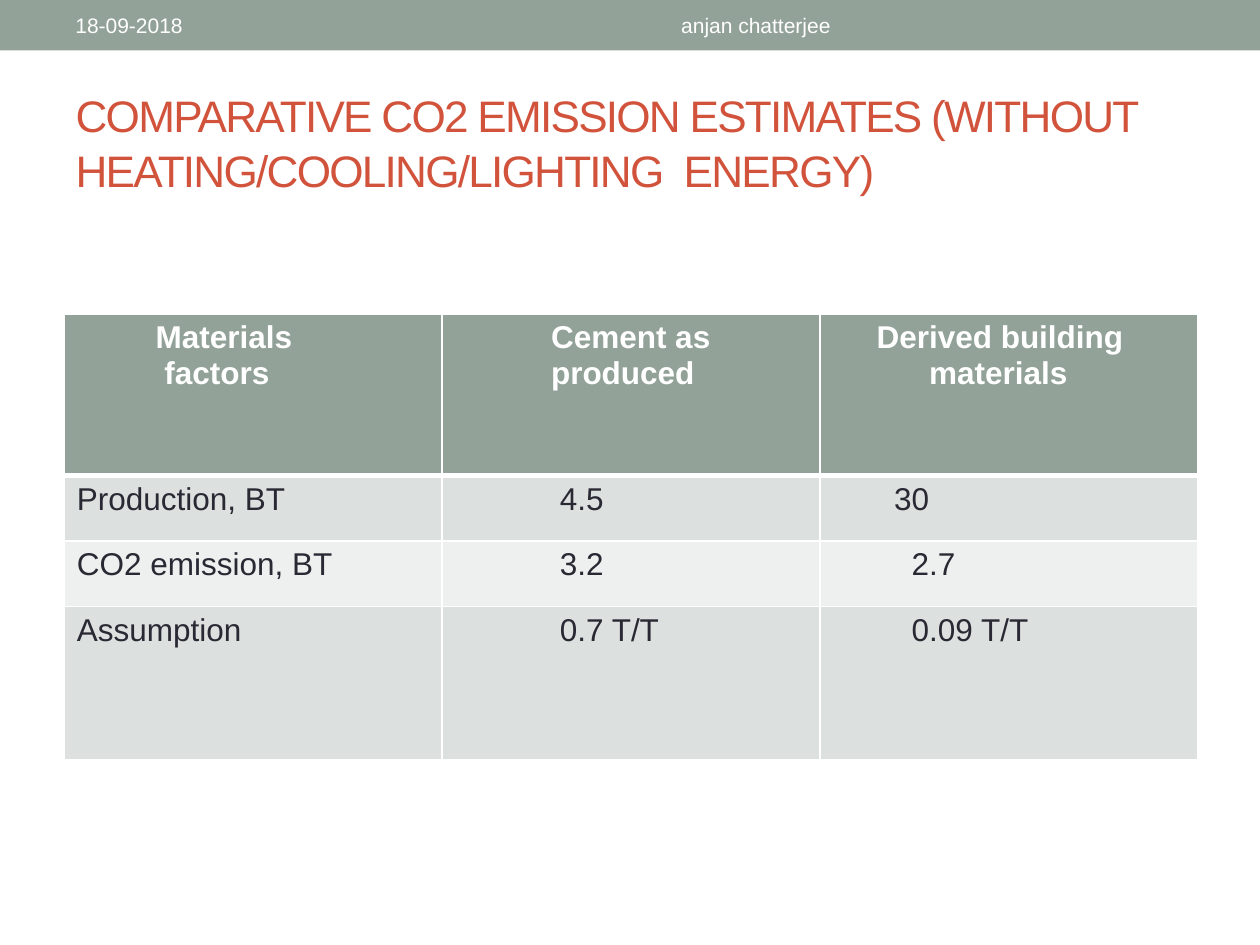
from pptx import Presentation
from pptx.dml.color import RGBColor
from pptx.enum.shapes import MSO_SHAPE
from pptx.enum.text import MSO_ANCHOR, PP_ALIGN
from pptx.oxml import parse_xml
from pptx.oxml.ns import nsdecls
from pptx.util import Pt


def rgb(value):
    return RGBColor.from_string(value)


def style(p, size, color, bold=False):
    for r in p.runs:
        r.font.name = "Arial"
        r.font.size = Pt(size)
        r.font.bold = bold
        r.font.color.rgb = rgb(color)


SAGE, WHITE, INK, RUST = "93A299", "FFFFFF", "292934", "D2533C"

prs = Presentation()
prs.slide_width, prs.slide_height = Pt(720), Pt(540)
s = prs.slides.add_slide(prs.slide_layouts[5])

sp = s.shapes.add_shape(MSO_SHAPE.RECTANGLE, 0, 0, Pt(720), Pt(28.8))
sp.shadow.inherit = False
sp.fill.solid()
sp.fill.fore_color.rgb = rgb(SAGE)
sp.line.fill.background()

title = s.shapes.title
title.left, title.top, title.width, title.height = Pt(36), Pt(41.76), Pt(648), Pt(77.76)
tf = title.text_frame
tf.text = "COMPARATIVE CO2 EMISSION ESTIMATES (WITHOUT HEATING/COOLING/LIGHTING  ENERGY)"
tf.vertical_anchor = MSO_ANCHOR.MIDDLE
tf.word_wrap = True
p = tf.paragraphs[0]
p.alignment = PP_ALIGN.LEFT
p.line_spacing = 1.05
style(p, 25.2, RUST)
p.runs[0].font._element.set("spc", "-100")

for text, left, width, align in [
    ("18-09-2018", 36, 228, PP_ALIGN.LEFT),
    ("anjan chatterjee", 270, 324, PP_ALIGN.CENTER),
]:
    tf = s.shapes.add_textbox(Pt(left), Pt(1.44), Pt(width), Pt(25.92)).text_frame
    tf.text = text
    tf.word_wrap = True
    tf.vertical_anchor = MSO_ANCHOR.MIDDLE
    tf.paragraphs[0].alignment = align
    style(tf.paragraphs[0], 12, WHITE)

rows = [
    [[("Materials", 45), ("factors", 50)],
     [("Cement as", 55), ("produced", 55)],
     [("Derived building", 25), ("materials", 55)]],
    [[("Production, BT", 0)], [("4.5", 60)], [("30", 35)]],
    [[("CO2 emission, BT", 0)], [("3.2", 60)], [("2.7", 45)]],
    [[("Assumption", 0)], [("0.7 T/T", 60)], [("0.09 T/T", 45)]],
]
heights = [92.16, 37.44, 37.44, 87.84]
fills = [SAGE, "DCE0DE", "EEF0EF", "DCE0DE"]

table = s.shapes.add_table(4, 3, Pt(36.72), Pt(179.5), Pt(648), Pt(sum(heights))).table
for col in table.columns:
    col.width = Pt(216)
for i, row in enumerate(rows):
    table.rows[i].height = Pt(heights[i])
    for j, lines in enumerate(row):
        cell = table.cell(i, j)
        tf = cell.text_frame
        tf.text = "\n".join(text for text, indent in lines)
        for p, (text, indent) in zip(tf.paragraphs, lines):
            p._p.get_or_add_pPr().set("marL", str(Pt(indent)))
            style(p, 18, WHITE if i == 0 else INK, i == 0)
        tcPr = cell._tc.get_or_add_tcPr()
        for side in "LRTB":
            thick = (i, side) in [(0, "B"), (1, "T")]
            tcPr.append(parse_xml(
                f'<a:ln{side} {nsdecls("a")} w="{Pt(3 if thick else 1)}">'
                f'<a:solidFill><a:srgbClr val="{WHITE}"/></a:solidFill></a:ln{side}>'))
        cell.fill.solid()
        cell.fill.fore_color.rgb = rgb(fills[i])

prs.save("out.pptx")
